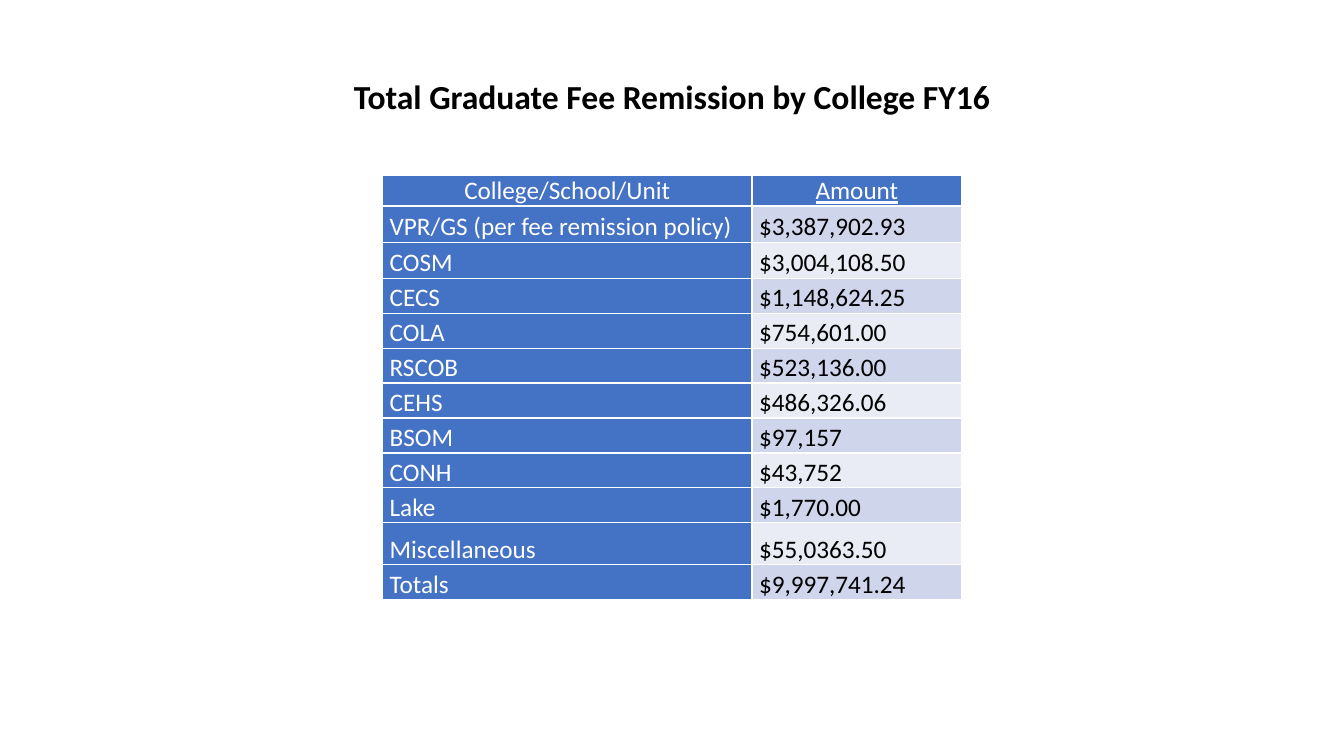
"""Builds a slide with a table of graduate fee remission by college."""
import pptx
import pptx.dml.color
import pptx.enum.text
import pptx.oxml
import pptx.oxml.ns
import pptx.util

Cm = pptx.util.Cm
Pt = pptx.util.Pt
ALIGN = pptx.enum.text.PP_ALIGN

COLORS = {
    "text": "000000",
    "light": "FFFFFF",
    "heading": "4472C4",
    "odd": "CFD5EA",
    "even": "E9EBF5",
}
HEADINGS = ("College/School/Unit", "Amount")
AMOUNTS = [
    ("VPR/GS (per fee remission policy)", "$3,387,902.93"),
    ("COSM", "$3,004,108.50"),
    ("CECS", "$1,148,624.25"),
    ("COLA", "$754,601.00"),
    ("RSCOB", "$523,136.00"),
    ("CEHS", "$486,326.06"),
    ("BSOM", "$97,157"),
    ("CONH", "$43,752"),
    ("Lake", "$1,770.00"),
    ("Miscellaneous", "$55,0363.50"),
    ("Totals", "$9,997,741.24"),
]
COLUMN_WIDTHS = (9.31, 5.29)
ROW_HEIGHTS = [0.74, 0.91, 0.91] + [0.88] * 7 + [1.06, 0.88]


def rgb(name):
    return pptx.dml.color.RGBColor.from_string(COLORS[name])


def write(frame, text, font="Calibri", size=18, color="text", align=ALIGN.LEFT,
          bold=False, underline=False):
    para = frame.paragraphs[0]
    para.alignment = align
    span = para.add_run()
    span.text = text
    span.font.name = font
    span.font.size = Pt(size)
    span.font.bold = bold
    span.font.underline = underline
    span.font.color.rgb = rgb(color)


class FeeSlide:
    def __init__(self, deck, font="Calibri"):
        self.font = font
        self.page = deck.slides.add_slide(deck.slide_layouts[6])

    def title(self, text, left, top, width, height):
        box = self.page.shapes.add_textbox(Cm(left), Cm(top), Cm(width), Cm(height))
        frame = box.text_frame
        frame.word_wrap = True
        frame.auto_size = pptx.enum.text.MSO_AUTO_SIZE.SHAPE_TO_FIT_TEXT
        write(frame, text, font=self.font, size=24, align=ALIGN.CENTER, bold=True)

    def border(self, cell):
        properties = cell._tc.get_or_add_tcPr()
        for side in ("lnL", "lnR", "lnT", "lnB"):
            properties.append(pptx.oxml.parse_xml(
                f'<a:{side} {pptx.oxml.ns.nsdecls("a")} w="{Pt(1)}"><a:solidFill>'
                f'<a:srgbClr val="{COLORS["light"]}"/></a:solidFill></a:{side}>'))

    def cell(self, cell, text, fill, **style):
        cell.margin_left = cell.margin_right = Cm(0.18)
        cell.margin_top = cell.margin_bottom = 0
        cell.vertical_anchor = pptx.enum.text.MSO_ANCHOR.BOTTOM
        self.border(cell)
        cell.fill.solid()
        cell.fill.fore_color.rgb = rgb(fill)
        write(cell.text_frame, text, font=self.font, **style)

    def table(self, left, top, headings, records, widths, heights):
        table = self.page.shapes.add_table(
            len(heights), len(widths), Cm(left), Cm(top),
            Cm(sum(widths)), Cm(sum(heights))).table
        table.first_col = True
        for column, width in zip(table.columns, widths):
            column.width = Cm(width)
        for row, height in zip(table.rows, heights):
            row.height = Cm(height)
        for column, heading in enumerate(headings):
            self.cell(table.cell(0, column), heading, "heading", color="light",
                      align=ALIGN.CENTER, underline=column == 1)
        for row, (unit, amount) in enumerate(records, 1):
            self.cell(table.cell(row, 0), unit, "heading", color="light")
            self.cell(table.cell(row, 1), amount, "odd" if row % 2 else "even")


def main():
    deck = pptx.Presentation()
    deck.slide_width = Cm(33.87)
    deck.slide_height = Cm(19.05)
    slide = FeeSlide(deck)
    slide.title("Total Graduate Fee Remission by College FY16", 8.47, 1.78, 16.93, 1.28)
    slide.table(9.64, 4.43, HEADINGS, AMOUNTS, COLUMN_WIDTHS, ROW_HEIGHTS)
    deck.save("out.pptx")


if __name__ == "__main__":
    main()
